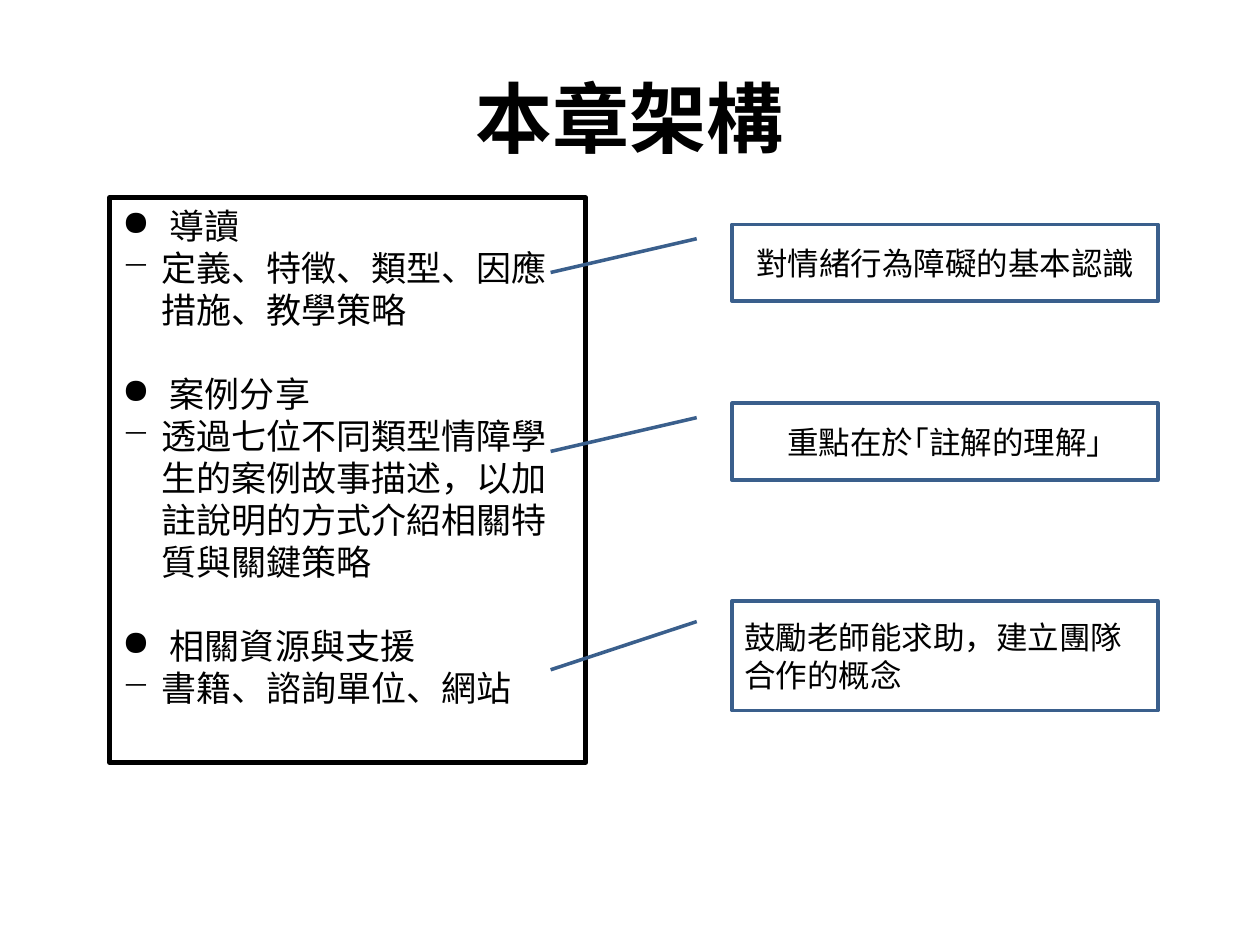
from dataclasses import dataclass

import pptx
import pptx.dml.color
import pptx.enum.shapes
import pptx.enum.text
import pptx.oxml.ns
import pptx.util
from lxml import etree

ALIGN = pptx.enum.text.PP_ALIGN
ANCHOR = pptx.enum.text.MSO_ANCHOR
SHAPE = pptx.enum.shapes.MSO_SHAPE


@dataclass(frozen=True)
class Theme:
    ink: str = "000000"
    callout_line: str = "3A5F8C"
    heading_font: str = "Noto Sans CJK SC"
    callout_font: str = "Calibri"
    bracket_font: str = "Noto Sans CJK TC"
    title_size: int = 44
    outline_size: int = 20
    callout_size: int = 18
    leading: float = 1.2


class SlideBuilder:
    """Places elements on a grid of 100 columns by 75 rows."""

    columns, rows = 100, 75

    def __init__(self, deck, theme):
        self.deck = deck
        self.theme = theme
        self.page = deck.slides.add_slide(deck.slide_layouts[6])

    def area(self, left, top, width, height):
        column = self.deck.slide_width / self.columns
        row = self.deck.slide_height / self.rows
        return [round(n * unit) for n, unit in
                zip((left, top, width, height), (column, row, column, row))]

    def frame(self, box, anchor):
        for name, value in {"word_wrap": True, "vertical_anchor": anchor}.items():
            setattr(box.text_frame, name, value)
        return box.text_frame

    def span(self, para, text, font, size, bold=False):
        span = para.add_run()
        span.text = text
        style = {"name": font, "size": pptx.util.Pt(size), "bold": bold}
        for name, value in style.items():
            setattr(span.font, name, value)
        span.font.color.rgb = pptx.dml.color.RGBColor.from_string(self.theme.ink)
        east_asian = etree.SubElement(span.font._element, pptx.oxml.ns.qn("a:ea"))
        east_asian.set("typeface", font)

    def outlined(self, kind, place, color, weight):
        box = self.page.shapes.add_shape(kind, *self.area(*place))
        box.shadow.inherit = False
        box.fill.background()
        box.line.color.rgb = pptx.dml.color.RGBColor.from_string(color)
        box.line.width = pptx.util.Pt(weight)
        return box

    def title(self, text, place):
        box = self.page.shapes.add_textbox(*self.area(*place))
        para = self.frame(box, ANCHOR.MIDDLE).paragraphs[0]
        para.alignment = ALIGN.CENTER
        self.span(para, text, self.theme.heading_font, self.theme.title_size, True)

    def bullet(self, para, mark, indent):
        properties = para._p.get_or_add_pPr()
        hang = pptx.util.Inches(indent)
        properties.set("marL", str(hang))
        properties.set("indent", str(-hang))
        etree.SubElement(properties, pptx.oxml.ns.qn("a:buChar")).set("char", mark)

    def outline(self, sections, place):
        """Draws the framed list: each section is a heading and a detail."""
        theme = self.theme
        leading = pptx.util.Pt(theme.outline_size * theme.leading)
        box = self.outlined(SHAPE.RECTANGLE, place, theme.ink, 3)
        frame = self.frame(box, ANCHOR.TOP)
        for number, section in enumerate(sections):
            for text, mark, indent in zip(section, "●−", (0.38, 0.31)):
                heading = mark == "●"
                first = heading and number == 0
                para = frame.paragraphs[0] if first else frame.add_paragraph()
                self.bullet(para, mark, indent)
                layout = {"alignment": ALIGN.LEFT, "line_spacing": leading}
                if heading and not first:
                    layout["space_before"] = leading
                for name, value in layout.items():
                    setattr(para, name, value)
                self.span(para, text, theme.heading_font, theme.outline_size)

    def callout(self, spans, place, align):
        theme = self.theme
        box = self.outlined(SHAPE.LINE_CALLOUT_1, place, theme.callout_line, 2)
        for index, value in enumerate((0.188, -0.083, 0.628, -0.426)):
            box.adjustments[index] = value
        para = self.frame(box, ANCHOR.MIDDLE).paragraphs[0]
        para.alignment = align
        para.line_spacing = pptx.util.Pt(theme.callout_size * theme.leading)
        for text, font in spans:
            self.span(para, text, font, theme.callout_size)


def main():
    deck = pptx.Presentation()
    deck.slide_width = pptx.util.Inches(10)
    deck.slide_height = pptx.util.Inches(7.5)
    theme = Theme()
    slide = SlideBuilder(deck, theme)

    slide.title("本章架構", (5, 3, 90, 12.5))
    slide.outline([
        ("導讀", "定義、特徵、類型、因應措施、教學策略"),
        ("案例分享", "透過七位不同類型情障學生的案例故事描述，以加註說明的方式介紹相關特質與關鍵策略"),
        ("相關資源與支援", "書籍、諮詢單位、網站"),
    ], (8.7, 15.7, 37.8, 44.8))

    body = theme.callout_font
    callouts = [
        ([("對情緒行為障礙的基本認識", body)], 17.8, 6.1, ALIGN.CENTER),
        ([("重點在於｢註解的理解", body), ("｣", theme.bracket_font)], 32, 6.1, ALIGN.CENTER),
        ([("鼓勵老師能求助，建立團隊合作的概念", body)], 47.7, 8.7, ALIGN.LEFT),
    ]
    for spans, top, height, align in callouts:
        slide.callout(spans, (58.1, top, 33.8, height), align)

    deck.save("out.pptx")


if __name__ == "__main__":
    main()
